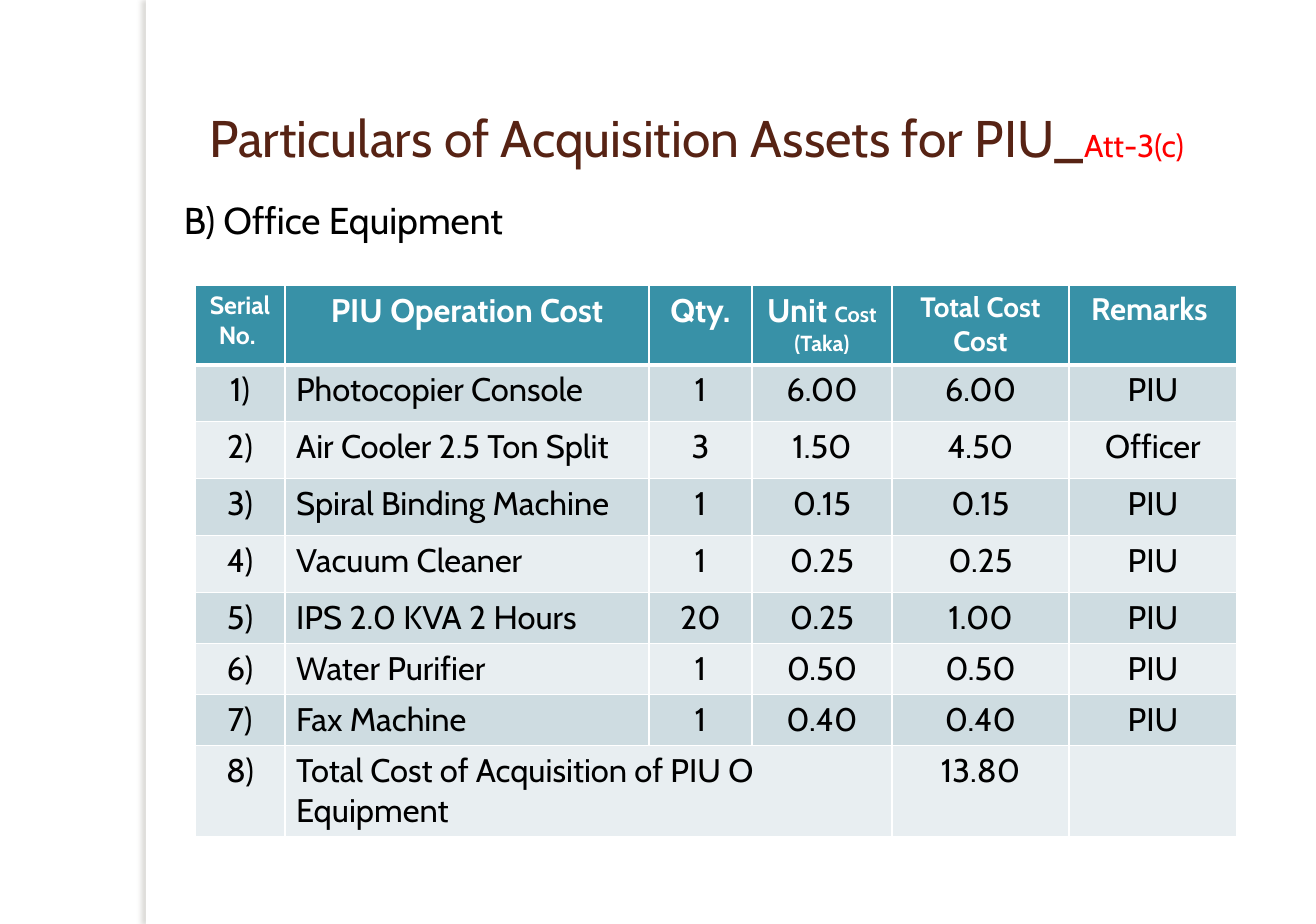
from dataclasses import dataclass

from lxml.etree import SubElement
from pptx import Presentation
from pptx.dml.color import RGBColor
from pptx.enum.shapes import MSO_SHAPE
from pptx.enum.text import MSO_ANCHOR, MSO_AUTO_SIZE, PP_ALIGN
from pptx.oxml import parse_xml
from pptx.oxml.ns import nsdecls, qn
from pptx.util import Emu, Pt


@dataclass(frozen=True)
class Theme:
    font: str = "Cabin"
    white: str = "FFFFFF"
    black: str = "000000"
    brown: str = "572314"
    red: str = "FF0000"
    shadow: str = "736F63"
    header: str = "3891A7"
    bands: tuple = ("CEDCE1", "E8EEF1")
    title: float = 33.1
    note: float = 20.3
    subtitle: float = 24
    body: float = 21
    remarks: float = 20
    total: float = 18
    serial: float = 16
    unit: float = 14


T = Theme()
COLUMNS = (90, 364, 103, 140, 177, 168)
ROWS = (77, *[57] * 4, *[50] * 3, 90)

# Each header cell is a list of paragraphs, each a list of (text, size) runs
HEADERS = [
    [[("Serial No. ", T.serial)]],
    [[("PIU Operation Cost", T.body)]],
    [[("Qty.", T.body)]],
    [[("Unit ", T.body), ("Cost (Taka)", T.unit)]],
    [[("Total Cost", T.total)], [("Cost", T.total)]],
    [[("Remarks ", T.remarks)]],
]
EQUIPMENT = [
    ("Photocopier Console", "1", "6.00", "6.00", "PIU"),
    ("Air Cooler 2.5 Ton Split", "3", "1.50", "4.50", "Officer"),
    ("Spiral Binding Machine", "1", "0.15", "0.15", "PIU"),
    ("Vacuum Cleaner", "1", "0.25", "0.25", "PIU"),
    ("IPS 2.0 KVA 2 Hours", "20", "0.25", "1.00", "PIU"),
    ("Water Purifier", "1", "0.50", "0.50", "PIU"),
    ("Fax Machine", "1", "0.40", "0.40", "PIU"),
    ("Total Cost of Acquisition of PIU O Equipment", "", "", "13.80", ""),
]


def px(n):
    return Emu(round(n * 914400 / 112))


def add_run(p, text, size, color, bold=False):
    r = p.add_run()
    r.text = text
    for name, value in {"name": T.font, "size": Pt(size), "bold": bold}.items():
        setattr(r.font, name, value)
    r.font.color.rgb = RGBColor.from_string(color)


def format_frame(tf, **values):
    for name, value in values.items():
        setattr(tf, name, value)


def add_side_strip(s):
    sp = s.shapes.add_shape(MSO_SHAPE.RECTANGLE, px(146), 0, px(10), px(924))
    sp.fill.solid()
    sp.fill.fore_color.rgb = RGBColor.from_string(T.white)
    sp.line.fill.background()
    # Soft shadow falling to the left
    sp.shadow.inherit = False
    effects = sp._element.spPr.find(qn("a:effectLst"))
    shadow = SubElement(effects, qn("a:outerShdw"), blurRad=str(Pt(3)),
                        dist=str(Pt(3)), dir="10800000", rotWithShape="0")
    color = SubElement(shadow, qn("a:srgbClr"), val=T.shadow)
    SubElement(color, qn("a:alpha"), val="25000")


def add_title(s):
    title = s.shapes.title
    box = {"left": 155, "top": 99, "width": 1083, "height": 75}
    for name, value in box.items():
        setattr(title, name, px(value))
    tf = title.text_frame
    format_frame(tf, word_wrap=True, auto_size=MSO_AUTO_SIZE.NONE,
                 vertical_anchor=MSO_ANCHOR.MIDDLE)
    p = tf.paragraphs[0]
    p.alignment = PP_ALIGN.CENTER
    add_run(p, "Particulars of Acquisition Assets for PIU_", T.title, T.brown)
    add_run(p, "Att-3(c)", T.note, T.red)


def add_subtitle(s):
    tf = s.shapes.add_textbox(px(173), px(192), px(383), px(56)).text_frame
    format_frame(tf, word_wrap=True, auto_size=MSO_AUTO_SIZE.SHAPE_TO_FIT_TEXT)
    add_run(tf.paragraphs[0], "B) Office Equipment", T.subtitle, T.black)


def format_cell(cell, fill, top=1, bottom=1):
    cell.fill.solid()
    cell.fill.fore_color.rgb = RGBColor.from_string(fill)
    tcPr = cell._tc.get_or_add_tcPr()
    widths = {"lnL": 1, "lnR": 1, "lnT": top, "lnB": bottom}
    for i, (side, width) in enumerate(widths.items()):
        tcPr.insert(i, parse_xml(
            f'<a:{side} {nsdecls("a")} w="{Pt(width)}"><a:solidFill>'
            f'<a:srgbClr val="{T.white}"/></a:solidFill></a:{side}>'))


def write_cell(cell, paragraphs, color, bold=False, align=PP_ALIGN.CENTER):
    tf = cell.text_frame
    for i, runs in enumerate(paragraphs):
        p = tf.add_paragraph() if i else tf.paragraphs[0]
        p.alignment = align
        for text, size in runs:
            add_run(p, text, size, color, bold)


def add_equipment_table(s):
    table = s.shapes.add_table(len(ROWS), len(COLUMNS), px(195), px(285),
                               px(sum(COLUMNS)), px(sum(ROWS))).table
    for column, width in zip(table.columns, COLUMNS):
        column.width = px(width)
    for row, height in zip(table.rows, ROWS):
        row.height = px(height)

    # Header row, with a thicker rule below
    for col, paragraphs in enumerate(HEADERS):
        cell = table.cell(0, col)
        format_cell(cell, T.header, bottom=3)
        write_cell(cell, paragraphs, T.white, bold=True)

    # Numbered, banded equipment rows
    for row, item in enumerate(EQUIPMENT, 1):
        for col, text in enumerate((f"{row})", *item)):
            cell = table.cell(row, col)
            format_cell(cell, T.bands[(row - 1) % 2], top=3 if row == 1 else 1)
            if text:
                align = PP_ALIGN.LEFT if col == 1 else PP_ALIGN.CENTER
                write_cell(cell, [[(text, T.body)]], T.black, align=align)

    # The total's label spans name, quantity and unit cost
    last = len(EQUIPMENT)
    table.cell(last, 1).merge(table.cell(last, 3))


def main():
    prs = Presentation()
    prs.slide_width, prs.slide_height = px(1316), px(924)
    s = prs.slides.add_slide(prs.slide_layouts[5])
    add_side_strip(s)
    add_title(s)
    add_equipment_table(s)
    add_subtitle(s)
    prs.save("out.pptx")


if __name__ == "__main__":
    main()
